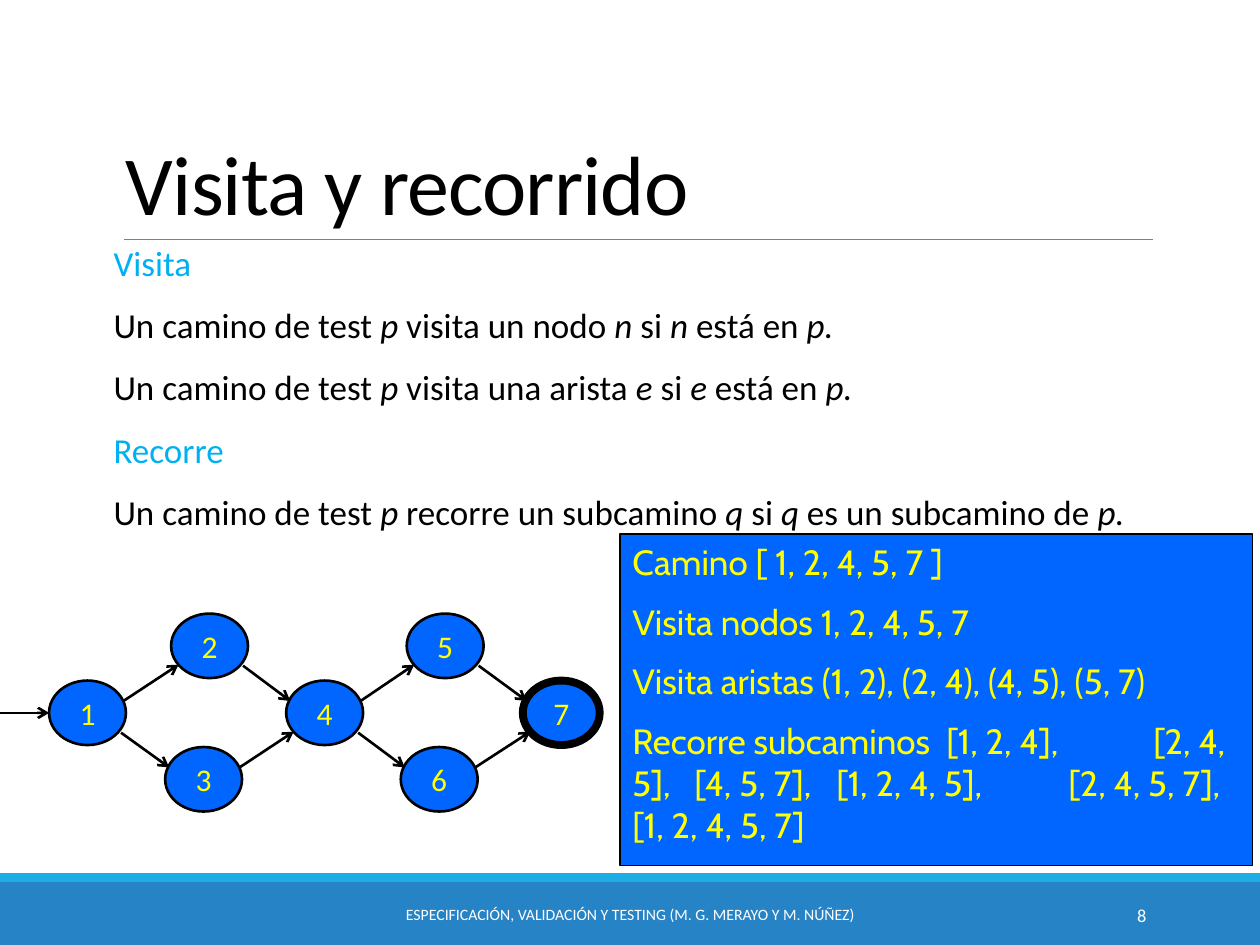
"""Build the slide on visiting and touring test paths."""
import dataclasses
import typing

import lxml.etree
import pptx
import pptx.dml.color
import pptx.enum.shapes
import pptx.enum.text
import pptx.oxml.ns
import pptx.util

Cm = pptx.util.Cm
Pt = pptx.util.Pt
Kind = pptx.enum.shapes.MSO_SHAPE
Align = pptx.enum.text.PP_ALIGN
Anchor = pptx.enum.text.MSO_ANCHOR
qn = pptx.oxml.ns.qn

HUES = {
    "band": "2683C6", "strip": "1CADE4", "rule": "808080", "head": "00B0F0",
    "node": "0066FF", "label": "FFFF00", "ink": "000000", "paper": "FFFFFF",
}
WIDE, HIGH = 1.55, 1.3


@dataclasses.dataclass
class Area:
    left: float
    top: float
    width: float
    height: float

    def cm(self) -> list[pptx.util.Length]:
        return [Cm(v) for v in dataclasses.astuple(self)]


@dataclasses.dataclass
class Style:
    size: float
    hue: str
    font: str = "Calibri"
    align: typing.Any = Align.LEFT
    anchor: typing.Any = Anchor.TOP
    inset: tuple[float, float] = (0.25, 0.13)
    line: float = 1.0
    before: float = 0
    after: float = 0


@dataclasses.dataclass
class Node:
    left: float
    top: float
    edge: float = 1.5


NODES = {
    1: Node(0.99, 13.72), 2: Node(3.45, 12.37), 3: Node(3.33, 15.06),
    4: Node(5.77, 13.72), 5: Node(8.2, 12.37), 6: Node(8.08, 15.06),
    7: Node(10.54, 13.72, 4.5),
}
EDGES = [(1, 2), (1, 3), (2, 4), (3, 4), (4, 5), (4, 6), (5, 7), (6, 7)]
BODY = [
    ("head", "Visita"),
    ("ink", "Un camino de test *p* visita un nodo* n *si *n* está en *p.*"),
    ("ink", "Un camino de test *p* visita una arista *e *si *e *está en *p.*"),
    ("head", "Recorre"),
    ("ink", "Un camino de test *p *recorre un subcamino *q *si *q* es un subcamino de *p.*"),
]
CASES = [
    "Camino [ 1, 2, 4, 5, 7 ]",
    "Visita nodos 1, 2, 4, 5, 7",
    "Visita aristas (1, 2), (2, 4), (4, 5), (5, 7)",
    "Recorre subcaminos\t[1, 2, 4],\t\t[2, 4, 5],\t[4, 5, 7],\t[1, 2, 4, 5],\t[2, 4, 5, 7], [1, 2, 4, 5, 7]",
]
STOPS = [1.25, 4.11, 6.33, 8.79, 10.5]


def tint(name: str) -> pptx.dml.color.RGBColor:
    return pptx.dml.color.RGBColor.from_string(HUES[name])


def write(shape, lines: list[tuple[str, str]], style: Style) -> None:
    frame = shape.text_frame
    frame.word_wrap = True
    frame.vertical_anchor = style.anchor
    frame.margin_left = frame.margin_right = Cm(style.inset[0])
    frame.margin_top = frame.margin_bottom = Cm(style.inset[1])
    frame.text = "\n".join(text.replace("*", "") for _, text in lines)
    for para, (hue, text) in zip(frame.paragraphs, lines):
        para.alignment = style.align
        para.line_spacing = style.line
        para.space_before, para.space_after = Pt(style.before), Pt(style.after)
        parts = text.split("*")
        para.runs[0].text = parts[0]
        for part in filter(None, parts[1:]):
            para.add_run().text = part
        for place, run in enumerate(para.runs):
            run.font.name, run.font.size = style.font, Pt(style.size)
            run.font.color.rgb = tint(hue)
            run.font.italic = place % 2 == 1


def label(slide, area: Area, text: str, style: Style):
    box = slide.shapes.add_textbox(*area.cm())
    write(box, [(style.hue, text)], style)
    return box


def block(slide, kind, area: Area, fill: str, edge: float = 0):
    shape = slide.shapes.add_shape(kind, *area.cm())
    shape.shadow.inherit = False
    shape.fill.solid()
    shape.fill.fore_color.rgb = tint(fill)
    if edge:
        shape.line.color.rgb = tint("ink")
        shape.line.width = Pt(edge)
    else:
        shape.line.fill.background()
    return shape


def link(slide, ends: list[float], hue: str, width: float, head: bool = False) -> None:
    line = slide.shapes.add_connector(
        pptx.enum.shapes.MSO_CONNECTOR.STRAIGHT, *[Cm(v) for v in ends])
    line.line.color.rgb = tint(hue)
    line.line.width = Pt(width)
    props = line._element.spPr
    if head:
        lxml.etree.SubElement(props.find(qn("a:ln")), qn("a:tailEnd"), type="arrow")
    lxml.etree.SubElement(props, qn("a:effectLst"))


def graph(slide) -> None:
    style = Style(18, "label", align=Align.CENTER, anchor=Anchor.MIDDLE, inset=(0, 0))
    for name, node in NODES.items():
        area = Area(node.left, node.top, WIDE, HIGH)
        shape = block(slide, Kind.OVAL, area, "node", node.edge)
        write(shape, [(style.hue, str(name))], style)
    first = NODES[1]
    mid = first.top + HIGH / 2
    link(slide, [0, mid, first.left, mid], "ink", 1.5, True)
    for start, end in EDGES:
        one, two = NODES[start], NODES[end]
        rise = two.top < one.top
        out, into = ((1.5, 0.41), (0.15, 1.03)) if rise else ((1.45, 1.05), (0.08, 0.41))
        ends = [one.left + out[0], one.top + out[1], two.left + into[0], two.top + into[1]]
        link(slide, ends, "ink", 1.5, True)


def cases(slide) -> None:
    panel = block(slide, Kind.RECTANGLE, Area(12.5, 10.77, 12.75, 6.68), "node", 1)
    write(panel, [("label", text) for text in CASES], Style(20, "label", "Cabin", before=10))
    props = panel.text_frame.paragraphs[-1]._p.get_or_add_pPr()
    tabs = lxml.etree.SubElement(props, qn("a:tabLst"))
    for stop in STOPS:
        lxml.etree.SubElement(tabs, qn("a:tab"), pos=str(int(Cm(stop))), algn="l")


def main() -> None:
    deck = pptx.Presentation()
    deck.slide_width, deck.slide_height = Cm(25.4), Cm(19.05)
    slide = deck.slides.add_slide(deck.slide_layouts[6])
    block(slide, Kind.RECTANGLE, Area(0, 17.78, 25.4, 1.27), "band")
    block(slide, Kind.RECTANGLE, Area(0, 17.6, 25.4, 0.18), "strip")
    link(slide, [2.49, 4.83, 23.24, 4.83], "rule", 0.5)
    title = label(slide, Area(2.29, 0.79, 20.95, 4.04), "Visita y recorrido",
                  Style(48, "ink", anchor=Anchor.BOTTOM, line=0.85))
    title.text_frame.paragraphs[0].runs[0]._r.get_or_add_rPr().set("spc", "-50")
    body = slide.shapes.add_textbox(*Area(2.29, 4.83, 20.95, 6.4).cm())
    write(body, BODY, Style(20, "ink", inset=(0, 0.13), line=0.9, before=12, after=2))
    graph(slide)
    cases(slide)
    label(slide, Area(7.67, 17.93, 10.06, 1.02),
          "ESPECIFICACIÓN, VALIDACIÓN Y TESTING (M. G. MERAYO Y M. NÚÑEZ)",
          Style(9, "paper", align=Align.CENTER, anchor=Anchor.MIDDLE))
    label(slide, Area(20.62, 17.93, 2.74, 1.02), "8",
          Style(10.5, "paper", align=Align.RIGHT, anchor=Anchor.MIDDLE))
    deck.save("out.pptx")


if __name__ == "__main__":
    main()
